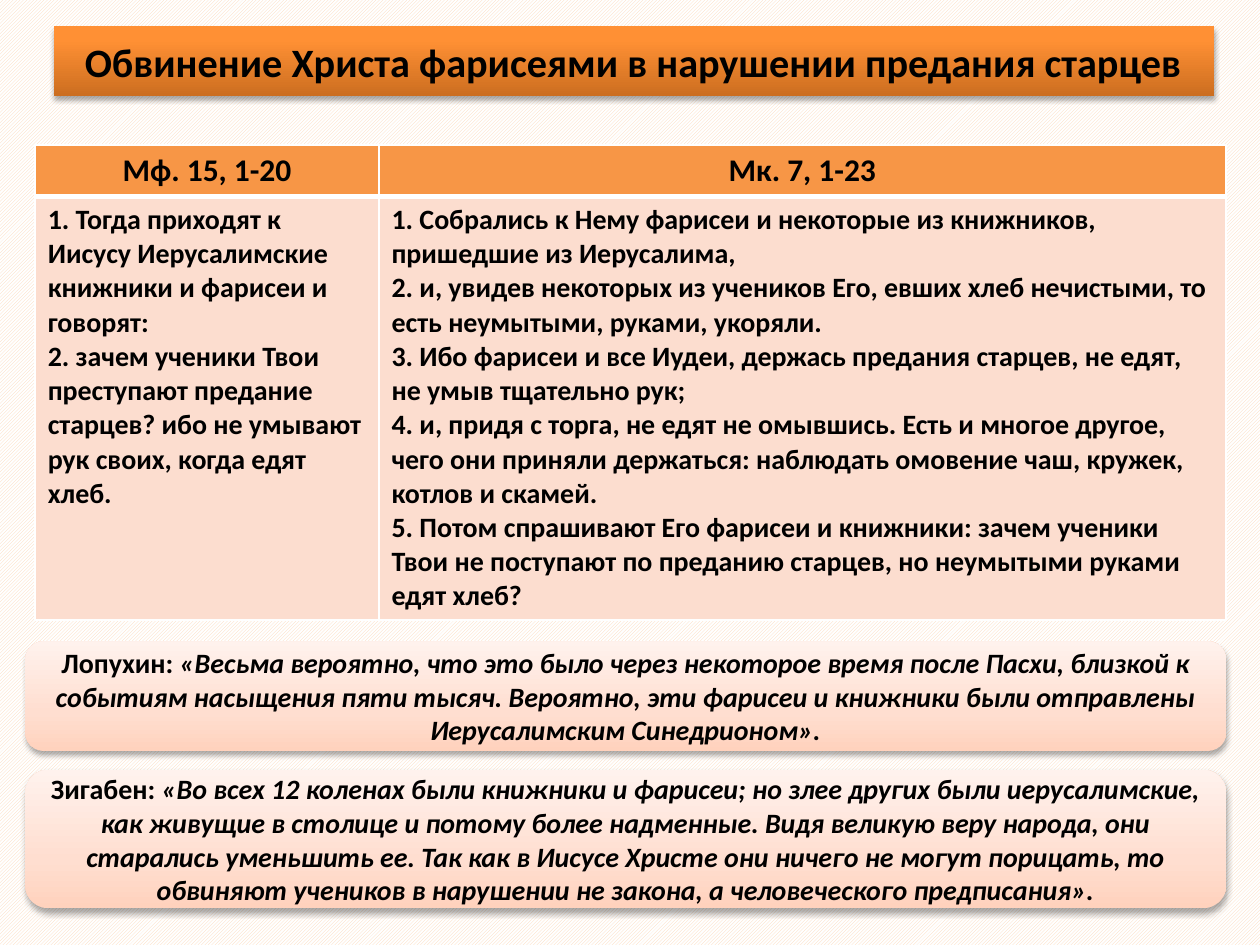
from dataclasses import dataclass

from lxml.etree import SubElement
from pptx import Presentation
from pptx.dml.color import RGBColor
from pptx.enum.dml import MSO_PATTERN
from pptx.enum.shapes import MSO_SHAPE
from pptx.enum.text import MSO_ANCHOR, MSO_AUTO_SIZE, PP_ALIGN
from pptx.oxml.ns import qn
from pptx.util import Cm, Pt


@dataclass(frozen=True)
class Shadow:
    opacity: int
    blur: float
    distance: float


@dataclass(frozen=True)
class Theme:
    font: str = "Calibri"
    title_size: float = 23
    header_size: float = 18
    body_size: float = 16
    text: str = "000000"
    white: str = "FFFFFF"
    hatch: str = "FCD5B5"
    header_fill: str = "F79646"
    body_fill: str = "FCDDCF"
    title_stops: tuple = ((0, "CC6E20"), (80, "FF9034"), (100, "FF9136"))
    quote_stops: tuple = ((0, "FFD2BD"), (35, "FFDED0"), (100, "FFF2ED"))
    title_shadow: Shadow = Shadow(35, 3.1, 1.8)
    quote_shadow: Shadow = Shadow(32, 3.5, 2.2)


@dataclass(frozen=True)
class Quote:
    top: float
    height: float
    author: str
    words: str


@dataclass(frozen=True)
class Column:
    width: float
    heading: str
    verses: tuple


THEME = Theme()
TITLE = "Обвинение Христа фарисеями в нарушении предания старцев"
ROW_HEIGHTS = (1.04, 8.48)

COLUMNS = (
    Column(6.93, "Мф. 15, 1-20", (
        "1. Тогда приходят к Иисусу Иерусалимские книжники и фарисеи и говорят:",
        "2. зачем ученики Твои преступают предание старцев? ибо не умывают рук своих, "
        "когда едят хлеб.",
    )),
    Column(17.07, "Мк. 7, 1-23", (
        "1. Собрались к Нему фарисеи и некоторые из книжников, пришедшие из Иерусалима,",
        "2. и, увидев некоторых из учеников Его, евших хлеб нечистыми, то есть неумытыми, "
        "руками, укоряли.",
        "3. Ибо фарисеи и все Иудеи, держась предания старцев, не едят, не умыв "
        "тщательно рук;",
        "4. и, придя с торга, не едят не омывшись. Есть и многое другое, чего они приняли "
        "держаться: наблюдать омовение чаш, кружек, котлов и скамей.",
        "5. Потом спрашивают Его фарисеи и книжники: зачем ученики Твои не поступают по "
        "преданию старцев, но неумытыми руками едят хлеб?",
    )),
)

QUOTES = (
    Quote(12.93, 2.21, "Лопухин: ",
          "«Весьма вероятно, что это было через некоторое время после Пасхи, близкой к "
          "событиям насыщения пяти тысяч. Вероятно, эти фарисеи и книжники были "
          "отправлены Иерусалимским Синедрионом»."),
    Quote(15.52, 2.79, "Зигабен: ",
          "«Во всех 12 коленах были книжники и фарисеи; но злее других были "
          "иерусалимские, как живущие в столице и потому более надменные. Видя великую "
          "веру народа, они старались уменьшить ее. Так как в Иисусе Христе они ничего не "
          "могут порицать, то обвиняют учеников в нарушении не закона, а человеческого "
          "предписания»."),
)


def add_color(parent, color: str):
    return SubElement(parent, qn("a:srgbClr"), val=color)


def format_text(text_frame, size: float, alignment: PP_ALIGN) -> None:
    for paragraph in text_frame.paragraphs:
        paragraph.alignment = alignment
        for run in paragraph.runs:
            run.font.name = THEME.font
            run.font.size = Pt(size)
            run.font.bold = True
            run.font.color.rgb = RGBColor.from_string(THEME.text)


def style_panel(shape, stops: tuple, shadow: Shadow) -> None:
    """Give a shape an upward gradient, a soft shadow and centred wrapped text."""
    shape.fill.gradient()
    shape.fill.gradient_angle = 90
    properties = shape.element.spPr
    stop_list = properties.find(qn("a:gradFill")).find(qn("a:gsLst"))
    for stop in list(stop_list):
        stop_list.remove(stop)
    for position, color in stops:
        add_color(SubElement(stop_list, qn("a:gs"), pos=str(position * 1000)), color)
    shape.line.fill.background()

    shape.shadow.inherit = False
    outer = SubElement(properties.find(qn("a:effectLst")), qn("a:outerShdw"),
                       blurRad=str(Pt(shadow.blur)), dist=str(Pt(shadow.distance)),
                       dir="5400000", rotWithShape="0")
    SubElement(add_color(outer, THEME.text), qn("a:alpha"), val=str(shadow.opacity * 1000))

    shape.text_frame.word_wrap = True
    shape.text_frame.auto_size = MSO_AUTO_SIZE.NONE
    shape.text_frame.vertical_anchor = MSO_ANCHOR.MIDDLE


def add_title(slide) -> None:
    title = slide.shapes.title
    title.left, title.top, title.width, title.height = Cm(1.09), Cm(0.53), Cm(23.39), Cm(1.4)
    geometry = SubElement(title.element.spPr, qn("a:prstGeom"), prst="roundRect")
    SubElement(geometry, qn("a:avLst"))
    style_panel(title, THEME.title_stops, THEME.title_shadow)
    title.text_frame.text = TITLE
    format_text(title.text_frame, THEME.title_size, PP_ALIGN.CENTER)


def set_borders(cell, widths: dict[str, float]) -> None:
    properties = cell._tc.get_or_add_tcPr()
    for index, (side, width) in enumerate(widths.items()):
        line = SubElement(properties, qn(f"a:ln{side}"), w=str(Pt(width)))
        add_color(SubElement(line, qn("a:solidFill")), THEME.white)
        properties.insert(index, line)


def fill_cell(cell, text: str, fill: str, size: float, alignment: PP_ALIGN) -> None:
    cell.fill.solid()
    cell.fill.fore_color.rgb = RGBColor.from_string(fill)
    cell.text_frame.text = text
    format_text(cell.text_frame, size, alignment)


def add_verse_table(slide) -> None:
    width = sum(column.width for column in COLUMNS)
    table = slide.shapes.add_table(len(ROW_HEIGHTS), len(COLUMNS), Cm(0.71), Cm(2.92),
                                   Cm(width), Cm(sum(ROW_HEIGHTS))).table
    table.horz_banding = False
    for row, height in zip(table.rows, ROW_HEIGHTS):
        row.height = Cm(height)
    for index, column in enumerate(COLUMNS):
        table.columns[index].width = Cm(column.width)
        header, body = table.cell(0, index), table.cell(1, index)
        fill_cell(header, column.heading, THEME.header_fill, THEME.header_size,
                  PP_ALIGN.CENTER)
        fill_cell(body, "\n".join(column.verses), THEME.body_fill, THEME.body_size,
                  PP_ALIGN.LEFT)
        set_borders(header, {"L": 1, "R": 1, "T": 1, "B": 3})
        set_borders(body, {"L": 1, "R": 1, "T": 3, "B": 1})


def add_quote(slide, quote: Quote) -> None:
    panel = slide.shapes.add_shape(MSO_SHAPE.ROUNDED_RECTANGLE, Cm(0.51), Cm(quote.top),
                                   Cm(24.21), Cm(quote.height))
    style_panel(panel, THEME.quote_stops, THEME.quote_shadow)
    paragraph = panel.text_frame.paragraphs[0]
    paragraph.add_run().text = quote.author
    words = paragraph.add_run()
    words.text = quote.words
    words.font.italic = True
    format_text(panel.text_frame, THEME.body_size, PP_ALIGN.CENTER)


def main() -> None:
    presentation = Presentation()
    presentation.slide_width, presentation.slide_height = Cm(25.4), Cm(19.05)
    slide = presentation.slides.add_slide(presentation.slide_layouts[5])

    # Hatched background
    background = slide.background.fill
    background.patterned()
    background.pattern = MSO_PATTERN.LIGHT_UPWARD_DIAGONAL
    background.fore_color.rgb = RGBColor.from_string(THEME.hatch)
    background.back_color.rgb = RGBColor.from_string(THEME.white)

    # Title, parallel verses and commentaries
    add_title(slide)
    add_verse_table(slide)
    for quote in QUOTES:
        add_quote(slide, quote)
    presentation.save("out.pptx")


if __name__ == "__main__":
    main()
